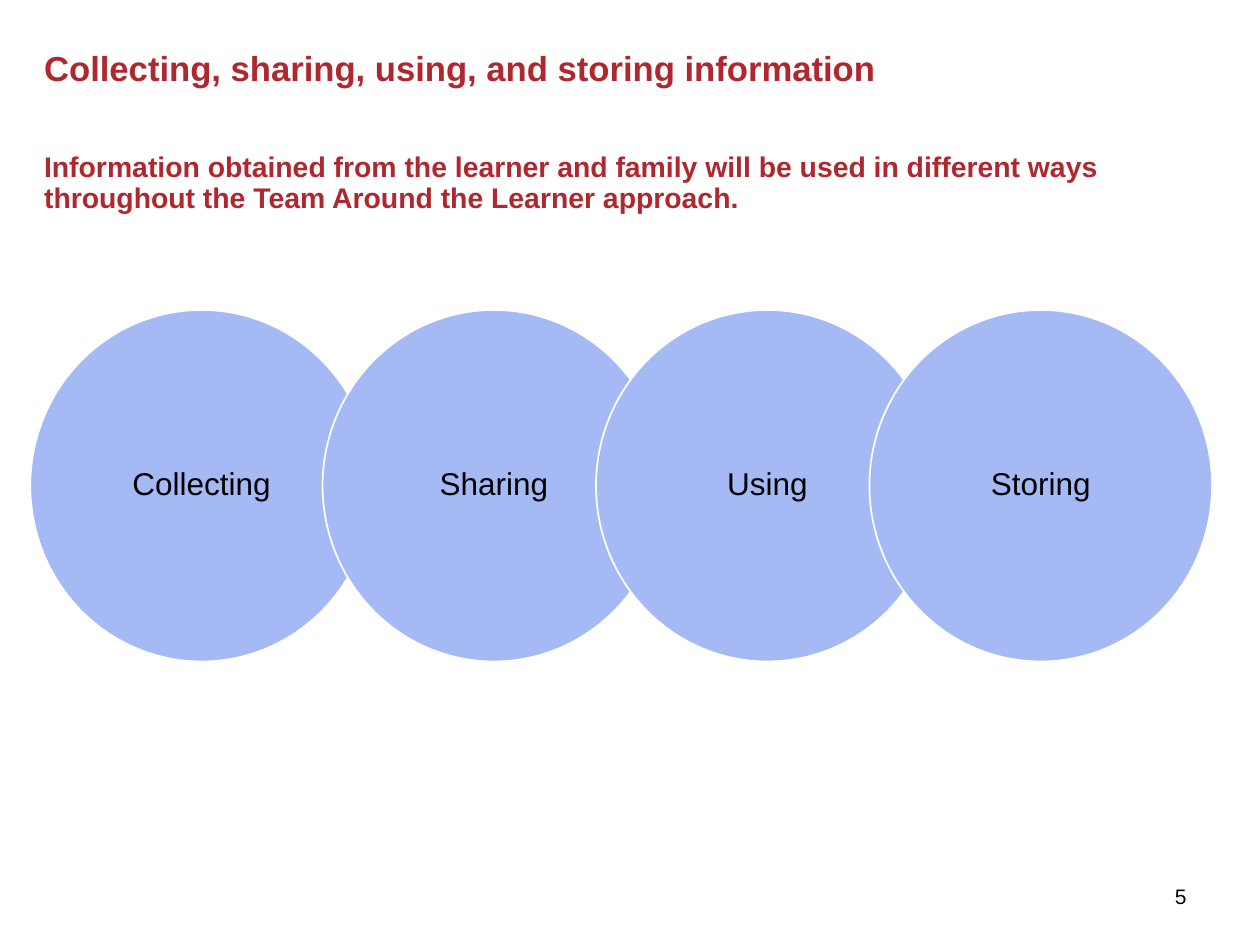
import pptx
import pptx.util
import pptx.dml.color
import pptx.enum.shapes
import pptx.enum.text

Inches = pptx.util.Inches
Pt = pptx.util.Pt
ALIGN = pptx.enum.text.PP_ALIGN
ANCHOR = pptx.enum.text.MSO_ANCHOR


def paint(hue):
    return pptx.dml.color.RGBColor.from_string(hue)


def write(para, text, size=18, hue="000000", bold=False, align=ALIGN.LEFT,
          line=1.0, before=0):
    para.text = text
    para.alignment = align
    para.line_spacing = line
    para.space_before = Pt(before)
    para.font.name = "Arial"
    para.font.size = Pt(size)
    para.font.bold = bold
    para.font.color.rgb = paint(hue)


class Deck:
    """Holds the style and the current slide."""

    red = "AF272F"
    blue = "A5BAF5"
    white = "FFFFFF"

    def __init__(self):
        self.file = pptx.Presentation()
        self.file.slide_width = Inches(10)
        self.file.slide_height = Inches(7.5)
        self.slide = self.file.slides.add_slide(self.file.slide_layouts[5])

    def frame(self, shape, anchor, side=0.1, top=0.05):
        frame = shape.text_frame
        frame.word_wrap = True
        frame.auto_size = pptx.enum.text.MSO_AUTO_SIZE.NONE
        frame.vertical_anchor = anchor
        frame.margin_left = frame.margin_right = Inches(side)
        frame.margin_top = frame.margin_bottom = Inches(top)
        return frame

    def title(self, head, lead):
        shape = self.slide.shapes.title
        shape.left, shape.top = Inches(0.35), Inches(0.41)
        shape.width, shape.height = Inches(9.25), Inches(1.3)
        frame = self.frame(shape, ANCHOR.TOP, 0, 0)
        write(frame.paragraphs[0], head, size=19.8, hue=self.red, bold=True,
              line=0.9)
        write(frame.add_paragraph(), lead, size=16.2, hue=self.red, bold=True,
              line=0.9, before=36.5)

    def circle(self, left, label):
        shape = self.slide.shapes.add_shape(
            pptx.enum.shapes.MSO_SHAPE.OVAL,
            Inches(left), Inches(2.46), Inches(2.72), Inches(2.79))
        shape.shadow.inherit = False
        shape.fill.solid()
        shape.fill.fore_color.rgb = paint(self.blue)
        shape.line.color.rgb = paint(self.white)
        shape.line.width = Pt(1)
        frame = self.frame(shape, ANCHOR.MIDDLE, 0, 0)
        write(frame.paragraphs[0], label, align=ALIGN.CENTER, line=0.9)

    def number(self, text):
        box = self.slide.shapes.add_textbox(
            Inches(9.13), Inches(6.91), Inches(0.48), Inches(0.4))
        frame = self.frame(box, ANCHOR.MIDDLE)
        write(frame.paragraphs[0], text, size=12, align=ALIGN.CENTER)


def main():
    deck = Deck()
    deck.title("Collecting, sharing, using, and storing information",
               "Information obtained from the learner and family will be used "
               "in different ways throughout the Team Around the Learner "
               "approach.")
    deck.circle(0.24, "Collecting")
    for step, label in enumerate(("Sharing", "Using", "Storing")):
        deck.circle(2.56 + 2.17 * step, label)
    deck.number("5")
    deck.file.save("out.pptx")


if __name__ == "__main__":
    main()
